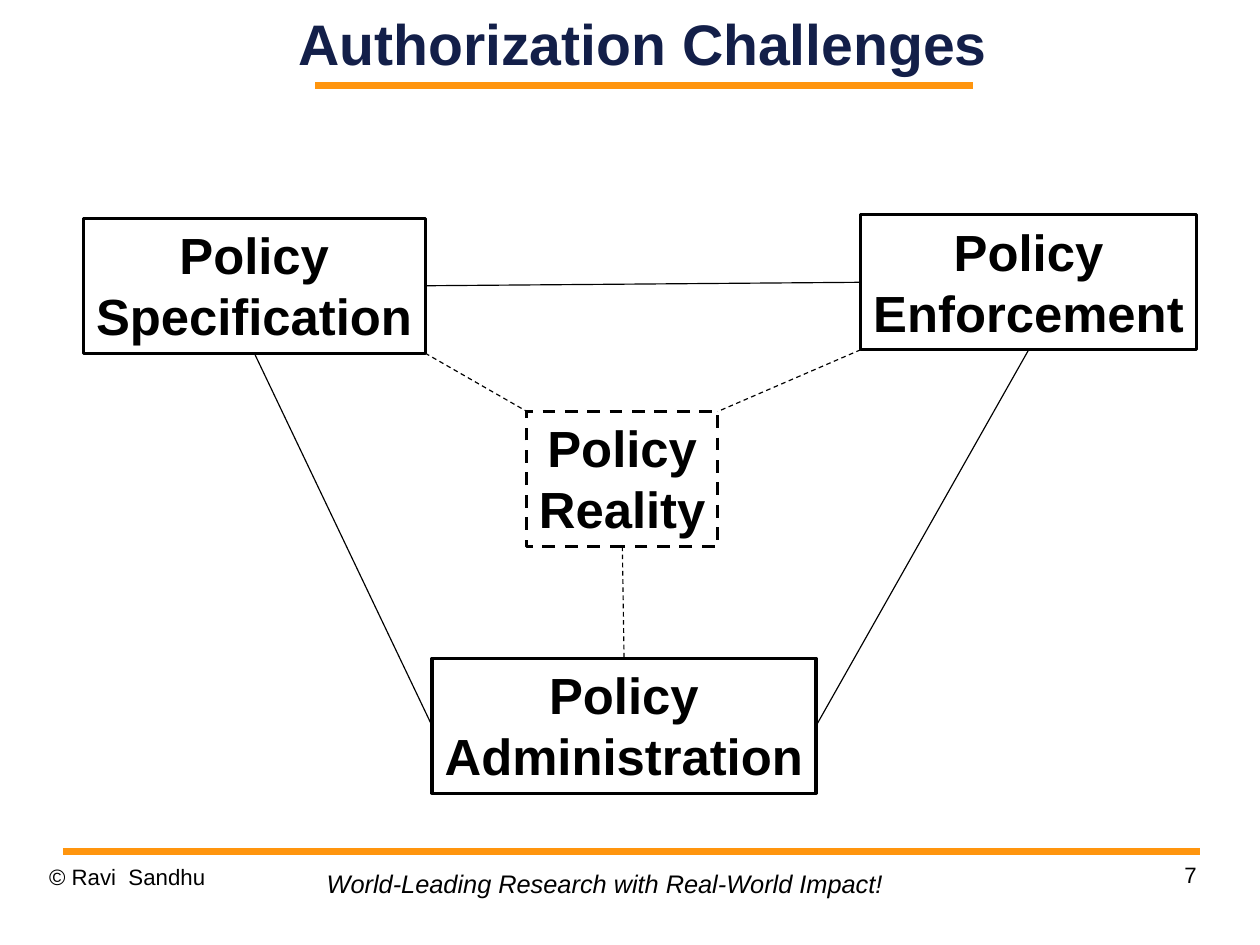
import pptx
import pptx.dml.color
import pptx.enum.dml
import pptx.enum.shapes
import pptx.enum.text
import pptx.oxml.ns
import pptx.util
from dataclasses import dataclass
from lxml import etree

Inches = pptx.util.Inches
ALIGN = pptx.enum.text.PP_ALIGN
ANCHOR = pptx.enum.text.MSO_ANCHOR
CM_PER_INCH = 2.54


@dataclass(frozen=True)
class Theme:
    """Hold the colours, font and sizes of the slide."""
    font: str = "Arial"
    ink: str = "000000"
    navy: str = "131F49"
    orange: str = "FF950E"
    title: int = 36
    box: int = 32
    motto: int = 16
    footer: int = 14
    rule: float = 4.31
    border: float = 2
    link: float = 0.75


def write_text(tf, text, *, font, size, color, bold=False, italic=False,
               align=ALIGN.LEFT, anchor=ANCHOR.TOP, inset=(0, 0), wrap=True, spacing=None):
    """Fill a text frame, one paragraph for each line of text."""
    tf.word_wrap = wrap
    tf.auto_size = pptx.enum.text.MSO_AUTO_SIZE.NONE
    tf.vertical_anchor = anchor
    tf.margin_left = tf.margin_right = Inches(inset[0])
    tf.margin_top = tf.margin_bottom = Inches(inset[1])
    for i, line in enumerate(text.split("\n")):
        p = tf.add_paragraph() if i else tf.paragraphs[0]
        p.alignment = align
        p.space_before = pptx.util.Pt(0)
        p.line_spacing = spacing
        r = p.add_run()
        r.text = line
        r.font.name = font
        r.font.size = pptx.util.Pt(size)
        r.font.bold = bold
        r.font.italic = italic
        r.font.color.rgb = pptx.dml.color.RGBColor.from_string(color)


def point_on(box, fx, fy):
    """Return the point at the given fractions of a box's width and height."""
    left, top, width, height = box
    return left + fx * width, top + fy * height


class SlideBuilder:
    """Draw styled elements on the current slide."""

    def __init__(self, prs, theme):
        """Add a title-only slide."""
        self.theme = theme
        self.slide = prs.slides.add_slide(prs.slide_layouts[5])

    def stroke(self, line, color, width, dashed):
        """Format an outline or a connector line."""
        line.color.rgb = pptx.dml.color.RGBColor.from_string(color)
        line.width = pptx.util.Pt(width)
        if dashed:
            line.dash_style = pptx.enum.dml.MSO_LINE.DASH

    def title(self, text, place):
        """Move and fill the title placeholder."""
        sp = self.slide.shapes.title
        sp.left, sp.top, sp.width, sp.height = map(Inches, place)
        write_text(sp.text_frame, text, font=self.theme.font, size=self.theme.title,
                   color=self.theme.navy, bold=True, align=ALIGN.CENTER, anchor=ANCHOR.MIDDLE)

    def label(self, text, place, size, **style):
        """Add a text box."""
        sp = self.slide.shapes.add_textbox(*map(Inches, place))
        write_text(sp.text_frame, text, font=self.theme.font, size=size,
                   color=self.theme.ink, **style)

    def box(self, text, place, dashed=False):
        """Add an outlined box with bold centred text."""
        sp = self.slide.shapes.add_shape(pptx.enum.shapes.MSO_SHAPE.RECTANGLE, *map(Inches, place))
        sp.shadow.inherit = False
        sp.fill.background()
        self.stroke(sp.line, self.theme.ink, self.theme.border, dashed)
        write_text(sp.text_frame, text, font=self.theme.font, size=self.theme.box,
                   color=self.theme.ink, bold=True, align=ALIGN.CENTER,
                   inset=(0.1, 0.05), wrap=False)

    def line(self, start, end, color, width, dashed=False):
        """Add a straight line without a shadow."""
        cxn = self.slide.shapes.add_connector(
            pptx.enum.shapes.MSO_CONNECTOR.STRAIGHT, *map(Inches, (*start, *end)))
        self.stroke(cxn.line, color, width, dashed)
        etree.SubElement(cxn._element.spPr, pptx.oxml.ns.qn("a:effectLst"))


def main():
    """Build and save the slide."""
    prs = pptx.Presentation()
    prs.slide_width, prs.slide_height = Inches(28 / CM_PER_INCH), Inches(21 / CM_PER_INCH)
    theme = Theme()
    s = SlideBuilder(prs, theme)

    s.title("Authorization Challenges", (2.41, 0, 6.43, 0.75))
    for left, right, y in ((2.76, 8.51, 0.75), (0.55, 10.5, 7.45)):
        s.line((left, y), (right, y), theme.orange, theme.rule)

    s.label("© Ravi  Sandhu", (0.43, 7.55, 2.57, 0.57), theme.footer, spacing=1.01)
    s.label("World-Leading Research with Real-World Impact!", (2.76, 7.55, 5.08, 0.37),
            theme.motto, italic=True, inset=(0.1, 0.05), wrap=False)
    s.label("7", (7.9, 7.53, 2.57, 0.57), theme.footer, align=ALIGN.RIGHT, spacing=1.01)

    height = 1.18
    boxes = {
        "Specification": (0.73, 1.91, 2.99, height),
        "Reality": (4.61, 3.6, 1.67, height),
        "Enforcement": (7.53, 1.88, 2.94, height),
        "Administration": (3.78, 5.76, 3.36, height),
    }
    for name, place in boxes.items():
        s.box(f"Policy\n{name}", place, dashed=name == "Reality")

    top, bottom, left, right = (0.5, 0), (0.5, 1), (0, 0.5), (1, 0.5)
    links = (
        ("Specification", bottom, "Administration", left),
        ("Specification", right, "Enforcement", left),
        ("Enforcement", bottom, "Administration", right),
        ("Specification", (1, 1), "Reality", (0, 0)),
        ("Enforcement", (0, 1), "Reality", (1, 0)),
        ("Reality", bottom, "Administration", top),
    )
    for source, source_side, target, target_side in links:
        s.line(point_on(boxes[source], *source_side), point_on(boxes[target], *target_side),
               theme.ink, theme.link, dashed="Reality" in (source, target))

    prs.save("out.pptx")


if __name__ == "__main__":
    main()
